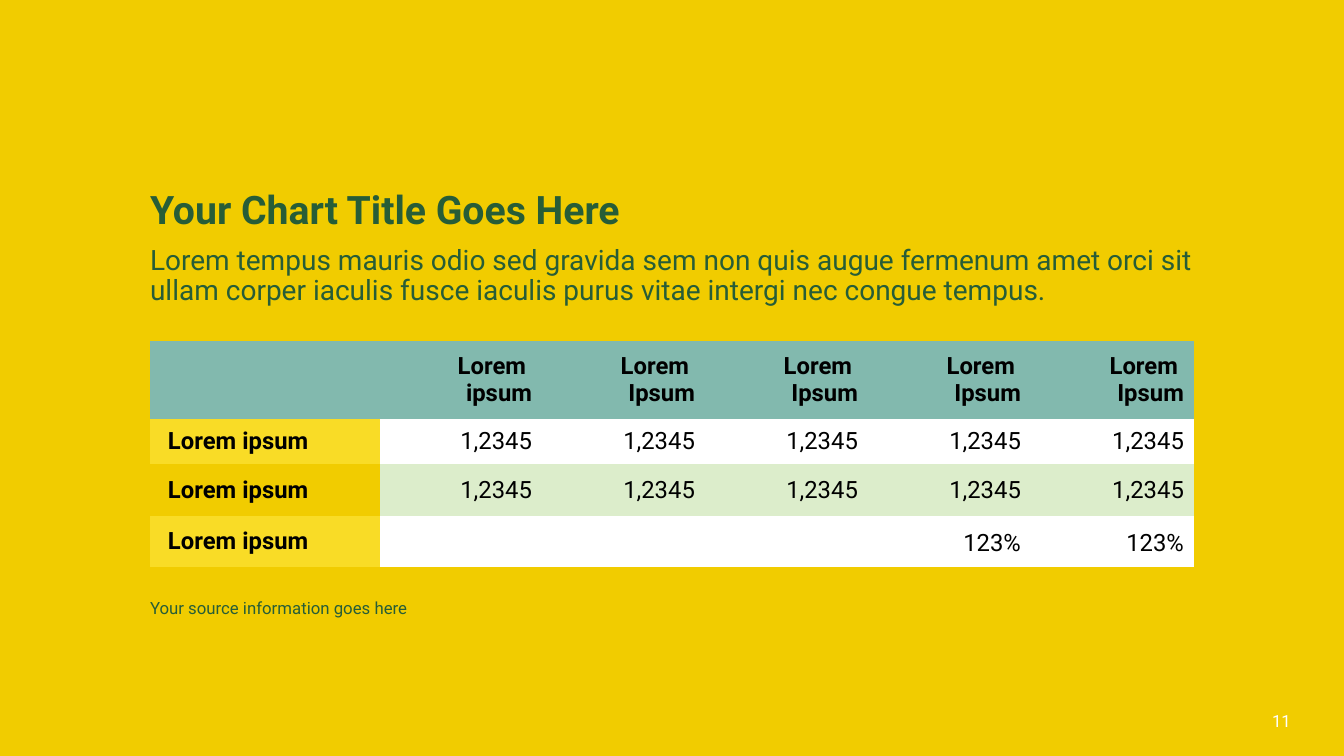
from dataclasses import dataclass

from pptx import Presentation
from pptx.dml.color import RGBColor
from pptx.enum.text import MSO_ANCHOR, MSO_AUTO_SIZE, PP_ALIGN
from pptx.oxml.ns import qn
from pptx.util import Pt

EMU_PER_PX = 914400 / 100.8
LEFT, RIGHT = PP_ALIGN.LEFT, PP_ALIGN.RIGHT
TOP, MIDDLE = MSO_ANCHOR.TOP, MSO_ANCHOR.MIDDLE
NO_AUTOFIT = MSO_AUTO_SIZE.NONE
NO_STYLE_NO_GRID = "{2D5ABB26-0587-4C30-8999-92F81FD0307C}"


@dataclass(frozen=True)
class Theme:
    font: str = "Roboto"
    background: str = "F1CC00"
    heading: str = "275D37"
    header_fill: str = "82B9AE"
    label_fill: str = "F9DC26"
    band_fill: str = "DCEDCB"
    white: str = "FFFFFF"
    black: str = "000000"
    title_size: int = 28
    lead_size: int = 20
    table_size: int = 17
    small_size: int = 12


THEME = Theme()

HEADERS = ["", "Lorem \nipsum"] + ["Lorem \nIpsum"] * 4
ROWS = [
    ["Lorem ipsum"] + ["1,2345"] * 5,
    ["Lorem ipsum"] + ["1,2345"] * 5,
    ["Lorem ipsum"] + [""] * 3 + ["123%"] * 2,
]
COLUMN_WIDTHS = [230, 162] + [163] * 4
ROW_HEIGHTS = [78, 45, 52, 51]


def px(n):
    return round(n * EMU_PER_PX)


def paint(fill, color):
    fill.solid()
    fill.fore_color.rgb = RGBColor.from_string(color)


def style_text(tf, size, color, bold=False, align=LEFT, spacing=1.0):
    for p in tf.paragraphs:
        p.alignment = align
        p.line_spacing = spacing
        p.space_before = Pt(0)
        p.font.name = THEME.font
        p.font.size = Pt(size)
        p.font.bold = bold
        p.font.color.rgb = RGBColor.from_string(color)


def fill_text_box(sp, box, text, size, color, bold=False, align=LEFT,
                  anchor=TOP, spacing=0.9, inset=0):
    sp.left, sp.top, sp.width, sp.height = map(px, box)
    tf = sp.text_frame
    tf.word_wrap = True
    tf.auto_size = NO_AUTOFIT
    tf.vertical_anchor = anchor
    tf.margin_left = tf.margin_right = px(inset)
    tf.margin_top = tf.margin_bottom = 0
    tf.text = text
    style_text(tf, size, color, bold, align, spacing)


def add_text(s, box, text, size, color, **options):
    sp = s.shapes.add_textbox(0, 0, 0, 0)
    fill_text_box(sp, box, text, size, color, **options)


def add_heading(s, x, y, w):
    # Title
    fill_text_box(s.shapes.title, (x, y, w, 42), "Your Chart Title Goes Here",
                  THEME.title_size, THEME.heading, bold=True)
    # Introduction
    add_text(s, (x, y + 55, w, 64),
             "Lorem tempus mauris odio sed gravida sem non quis augue fermenum "
             "amet orci sit ullam corper iaculis fusce iaculis purus vitae "
             "intergi nec congue tempus.",
             THEME.lead_size, THEME.heading)


def cell_fill(row, col):
    if row == 0:
        return THEME.header_fill
    banded = row % 2 == 0
    if col == 0:
        return None if banded else THEME.label_fill
    return THEME.band_fill if banded else THEME.white


def add_data_table(s, x, y):
    data = [HEADERS] + ROWS
    frame = s.shapes.add_table(len(data), len(HEADERS), px(x), px(y),
                               px(sum(COLUMN_WIDTHS)), px(sum(ROW_HEIGHTS)))
    table = frame.table
    table.first_row = table.horz_banding = False
    next(frame.element.iter(qn("a:tableStyleId"))).text = NO_STYLE_NO_GRID

    for column, width in zip(table.columns, COLUMN_WIDTHS):
        column.width = px(width)
    for row, height in zip(table.rows, ROW_HEIGHTS):
        row.height = px(height)

    for r, values in enumerate(data):
        for c, value in enumerate(values):
            cell = table.cell(r, c)
            cell.text = value
            cell.vertical_anchor = MIDDLE
            cell.margin_left = px(18 if c == 0 else 10)
            cell.margin_right = px(10)
            spacing = 0.95 if r == 0 else 1.15 if "%" in value else 1.0
            style_text(cell.text_frame, THEME.table_size, THEME.black,
                       bold=r == 0 or c == 0, align=RIGHT if c else LEFT,
                       spacing=spacing)
            fill = cell_fill(r, c)
            if fill:
                paint(cell.fill, fill)
            else:
                cell.fill.background()


def add_footer(s, x, y, w):
    # Source line
    add_text(s, (x, y, w, 41), "Your source information goes here",
             THEME.small_size, THEME.heading)
    # Page number
    add_text(s, (973, 701, 328, 40), "11", THEME.small_size, THEME.white,
             align=RIGHT, anchor=MIDDLE, spacing=1.0, inset=10)


def build_table_slide(prs):
    s = prs.slides.add_slide(prs.slide_layouts[5])
    paint(s.background.fill, THEME.background)
    left, width = 150, sum(COLUMN_WIDTHS)
    add_heading(s, left, 191, width)
    add_data_table(s, left, 341)
    add_footer(s, left, 600, width)


def main():
    prs = Presentation()
    prs.slide_width, prs.slide_height = px(1344), px(756)
    build_table_slide(prs)
    prs.save("out.pptx")


if __name__ == "__main__":
    main()
